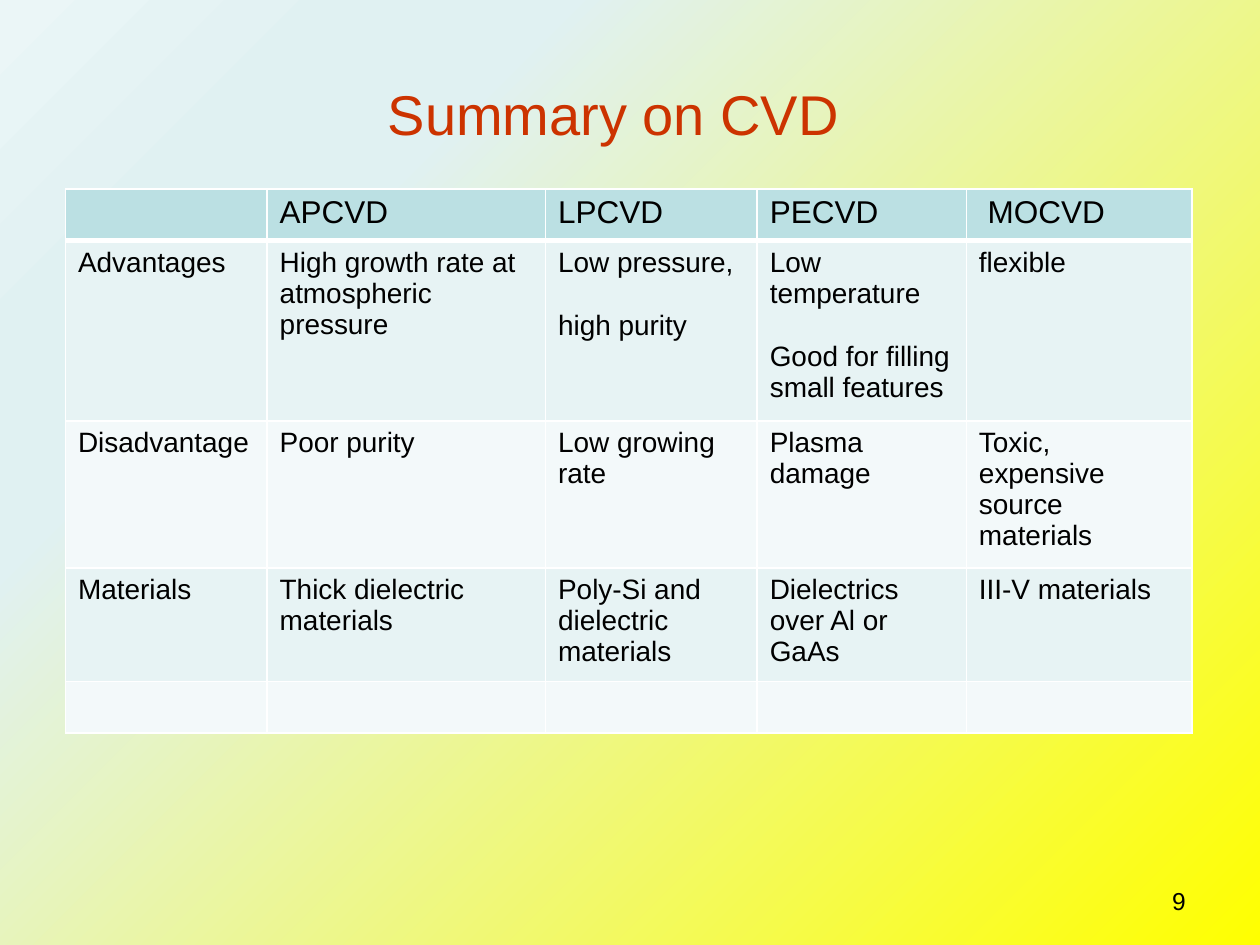
from dataclasses import dataclass
from pptx import Presentation
from pptx.dml.color import RGBColor as RGB
from pptx.enum.text import MSO_ANCHOR as Anchor, PP_ALIGN as Align
from pptx.oxml import parse_xml
from pptx.oxml.ns import nsdecls, qn
from pptx.util import Inches, Pt


@dataclass(frozen=True)
class Theme:
    font: str = "Arial"
    title: str = "CC3300"
    text: str = "000000"
    line: str = "FFFFFF"
    head: str = "BBE0E3"
    bands: tuple = ("E7F3F4", "F3F9FA")
    stops: tuple = ((0, "FFFF00"), (74, "E0F1F2"), (83, "E0F1F2"), (100, "EBF6F7"))
    title_size: int = 32
    head_size: int = 18
    body_size: int = 16
    num_size: int = 14
    gap: float = 18.4


THEME = Theme()
COLS = (1.6, 2.21, 1.68, 1.66, 1.79)
ROWS = (0.41, 1.43, 1.17, 0.9, 0.41)
CELLS = (
    ("", "APCVD", "LPCVD", "PECVD", " MOCVD"),
    ("Advantages", "High growth rate at atmospheric pressure",
     "Low pressure,\nhigh purity",
     "Low temperature\nGood for filling small features", "flexible"),
    ("Disadvantage", "Poor purity", "Low growing rate", "Plasma damage",
     "Toxic, expensive source materials"),
    ("Materials", "Thick dielectric materials",
     "Poly-Si and dielectric materials", "Dielectrics over Al or GaAs",
     "III-V materials"),
    ("",) * 5,
)


def style(frame, size, color, align=None):
    for para in frame.paragraphs:
        para.alignment = align
        for run in para.runs:
            run.font.name = THEME.font
            run.font.size = Pt(size)
            run.font.color.rgb = RGB.from_string(color)


def paint_back(slide):
    stops = "".join(f'<a:gs pos="{pos * 1000}"><a:srgbClr val="{color}"/></a:gs>'
                    for pos, color in THEME.stops)
    back = parse_xml(
        f'<p:bg {nsdecls("p", "a")}><p:bgPr><a:gradFill rotWithShape="1">'
        f'<a:gsLst>{stops}</a:gsLst><a:path path="circle">'
        '<a:fillToRect l="100000" t="100000"/></a:path></a:gradFill>'
        '<a:effectLst/></p:bgPr></p:bg>')
    slide.element.find(qn("p:cSld")).insert(0, back)


def add_title(slide, left, top, width, height):
    title = slide.shapes.title
    title.left, title.top = Inches(left), Inches(top)
    title.width, title.height = Inches(width), Inches(height)
    title.text_frame.text = "Summary on CVD"
    title.text_frame.vertical_anchor = Anchor.MIDDLE
    style(title.text_frame, THEME.title_size, THEME.title, Align.CENTER)


def edge_cell(cell, base):
    # Borders come before the fill in the cell properties
    props = cell._tc.get_or_add_tcPr()
    for spot, side in enumerate("LRTB"):
        width = Pt(base if side == "B" else 1)
        props.insert(spot, parse_xml(
            f'<a:ln{side} {nsdecls("a")} w="{width}"><a:solidFill>'
            f'<a:srgbClr val="{THEME.line}"/></a:solidFill></a:ln{side}>'))


def add_grid(slide, left, top, width, height):
    grid = slide.shapes.add_table(len(ROWS), len(COLS), Inches(left), Inches(top),
                                  Inches(width), Inches(height)).table
    grid.first_row = grid.horz_banding = False
    for col, size in zip(grid.columns, COLS):
        col.width = Inches(size)
    for r, (row, size) in enumerate(zip(grid.rows, ROWS)):
        row.height = Inches(size)
        for cell, text in zip(row.cells, CELLS[r]):
            cell.fill.solid()
            fill = THEME.bands[(r - 1) % 2] if r else THEME.head
            cell.fill.fore_color.rgb = RGB.from_string(fill)
            edge_cell(cell, 1 if r else 3)
            frame = cell.text_frame
            frame.text = text
            style(frame, THEME.body_size if r else THEME.head_size, THEME.text)
            for para in frame.paragraphs[1:]:
                para.space_before = Pt(THEME.gap)


def add_number(slide, left, top, width, height):
    box = slide.shapes.add_textbox(Inches(left), Inches(top),
                                   Inches(width), Inches(height))
    box.text_frame.word_wrap = True
    box.text_frame.text = "9"
    style(box.text_frame, THEME.num_size, THEME.text, Align.RIGHT)


def main():
    deck = Presentation()
    deck.slide_width, deck.slide_height = Inches(10), Inches(7.5)
    slide = deck.slides.add_slide(deck.slide_layouts[5])
    paint_back(slide)
    add_title(slide, 1.19, 0.4, 7.36, 0.99)
    add_grid(slide, 0.52, 1.5, sum(COLS), sum(ROWS))
    add_number(slide, 7.18, 6.98, 2.33, 0.52)
    deck.save("out.pptx")


if __name__ == "__main__":
    main()
